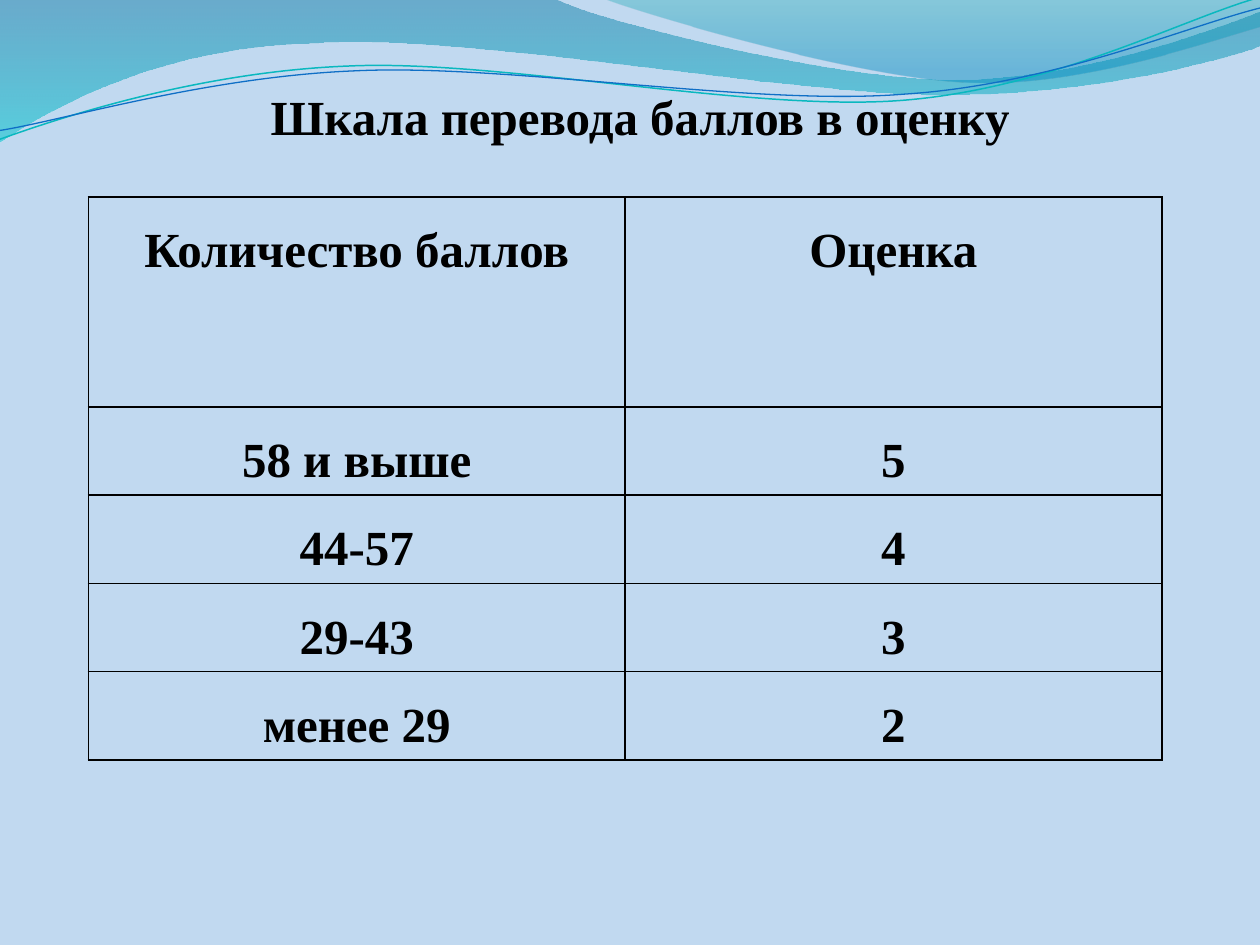
from lxml.etree import SubElement
from pptx import Presentation
from pptx.dml.color import RGBColor
from pptx.enum.text import MSO_ANCHOR, PP_ALIGN
from pptx.oxml.ns import qn
from pptx.util import Cm, Pt

TITLE = "Шкала перевода баллов в оценку"
ROWS = [
    ("Количество баллов", "Оценка"),
    ("58 и выше", "5"),
    ("44-57", "4"),
    ("29-43", "3"),
    ("менее 29", "2"),
]
FONT = "Times New Roman"
NO_STYLE = "{2D5ABB26-0587-4C30-8999-92F81FD0307C}"
CM_PER_INCH = 2.54
CURVE_TILT = -2.7
COLORS = {
    "background": "C1D9F0", "text": "000000", "border": "000000",
    "deep blue": "0074A1", "aqua": "00C6CF",
    "teal": "00A1A9", "sky": "008BBF",
    "teal line": "0AB8BF", "blue line": "0F6FC6",
}

WAVES = [
    ([(0, 0), (4.4, -0.01), (4.76, 0.17, 6.64, 0.63, 7.58, 0.63),
      (8.53, 0.63, 9.58, 0.26, 10, 0.09), (10.01, 0.36),
      (9.83, 0.44, 8.7, 0.76, 7.46, 0.75), (6.22, 0.75, 3.82, 0.28, 2.57, 0.34),
      (1.29, 0.36, 0.46, 0.83, -0.01, 1.13), (0, 0)],
     [(0, "deep blue", 45), (1, "aqua", 55)]),
    ([(4.79, -0.01), (5.09, 0.11, 6.82, 0.62, 7.69, 0.65),
      (8.56, 0.69, 9.61, 0.32, 10, 0.21), (10, 0), (4.79, -0.01)],
     [(0, "teal", 30), (0.8, "sky", 45)]),
]
CURVES = [
    ([(-0.02, 0.87), (0.47, 0.72, 1.58, 0.41, 2.77, 0.42),
      (3.96, 0.42, 5.91, 0.93, 7.12, 0.9), (8.32, 0.87, 9.4, 0.36, 10, 0.22)],
     "teal line", 0.85),
    ([(-0.02, 0.8), (0.46, 0.75, 1.64, 0.45, 2.83, 0.46),
      (4.04, 0.46, 5.96, 0.89, 7.16, 0.85), (8.35, 0.83, 9.42, 0.42, 10.02, 0.3)],
     "blue line", 0.75),
]


def rgb(name):
    return RGBColor.from_string(COLORS[name])


def add_outline(s, segments, close):
    points = [(Cm(seg[i] * CM_PER_INCH), Cm(seg[i + 1] * CM_PER_INCH))
              for seg in segments for i in range(0, len(seg), 2)]
    builder = s.shapes.build_freeform(*points[0])
    builder.add_line_segments(points[1:], close=close)
    sp = builder.convert_to_shape()
    sp.shadow.inherit = False
    lines = iter(list(sp._element.spPr.iter(qn("a:lnTo"))))
    for seg in segments[1:]:
        first = next(lines)
        if len(seg) == 6:
            first.tag = qn("a:cubicBezTo")
            for _ in range(2):
                extra = next(lines)
                first.append(extra[0])
                extra.getparent().remove(extra)
    return sp


def add_wave(s, segments, stops):
    sp = add_outline(s, segments, True)
    sp.line.fill.background()
    sp.fill.gradient()
    sp.fill.gradient_angle = 270
    for stop, (position, color, _) in zip(sp.fill.gradient_stops, stops):
        stop.position = position
        stop.color.rgb = rgb(color)
    for clr, (_, _, opacity) in zip(sp._element.spPr.iter(qn("a:srgbClr")), stops):
        SubElement(clr, qn("a:alpha"), val=str(opacity * 1000))


def add_curve(s, segments, color, width):
    sp = add_outline(s, segments, False)
    sp.rotation = CURVE_TILT
    sp.fill.background()
    sp.line.color.rgb = rgb(color)
    sp.line.width = Pt(width)


def write(tf, text):
    p = tf.paragraphs[0]
    p.text = text
    p.alignment = PP_ALIGN.CENTER
    p.font.name = FONT
    p.font.size = Pt(28)
    p.font.bold = True
    p.font.color.rgb = rgb("text")
    return p


def add_borders(cell):
    tcPr = cell._tc.get_or_add_tcPr()
    for side in ("lnL", "lnR", "lnT", "lnB"):
        ln = SubElement(tcPr, qn(f"a:{side}"), w=str(Pt(1)))
        fill = SubElement(ln, qn("a:solidFill"))
        SubElement(fill, qn("a:srgbClr"), val=COLORS["border"])


def add_score_table(s):
    col_width, header_height, row_height = Cm(10.82), Cm(4.23), Cm(1.78)
    heights = [header_height] + [row_height] * (len(ROWS) - 1)
    table = s.shapes.add_table(len(ROWS), len(ROWS[0]), Cm(1.78), Cm(3.97),
                               col_width * len(ROWS[0]), sum(heights)).table
    table.first_row = table.horz_banding = False
    table._tbl.tblPr.find(qn("a:tableStyleId")).text = NO_STYLE
    for i, (row, height) in enumerate(zip(ROWS, heights)):
        table.rows[i].height = height
        for j, text in enumerate(row):
            cell = table.cell(i, j)
            cell.margin_left = cell.margin_right = Cm(0.18)
            cell.margin_top = cell.margin_bottom = 0
            write(cell.text_frame, text).line_spacing = 1.5
            add_borders(cell)
            cell.fill.background()


def add_title(s):
    title = s.shapes.title
    title.left, title.top, title.width, title.height = Cm(1.4), Cm(0.79), Cm(23.01), Cm(2.31)
    tf = title.text_frame
    tf.vertical_anchor = MSO_ANCHOR.BOTTOM
    tf.margin_bottom = Cm(0.17)
    write(tf, TITLE)


def main():
    prs = Presentation()
    prs.slide_width, prs.slide_height = Cm(25.4), Cm(19.05)
    s = prs.slides.add_slide(prs.slide_layouts[5])
    s.background.fill.solid()
    s.background.fill.fore_color.rgb = rgb("background")
    for wave in WAVES:
        add_wave(s, *wave)
    for curve in CURVES:
        add_curve(s, *curve)
    add_score_table(s)
    add_title(s)
    prs.save("out.pptx")


if __name__ == "__main__":
    main()
